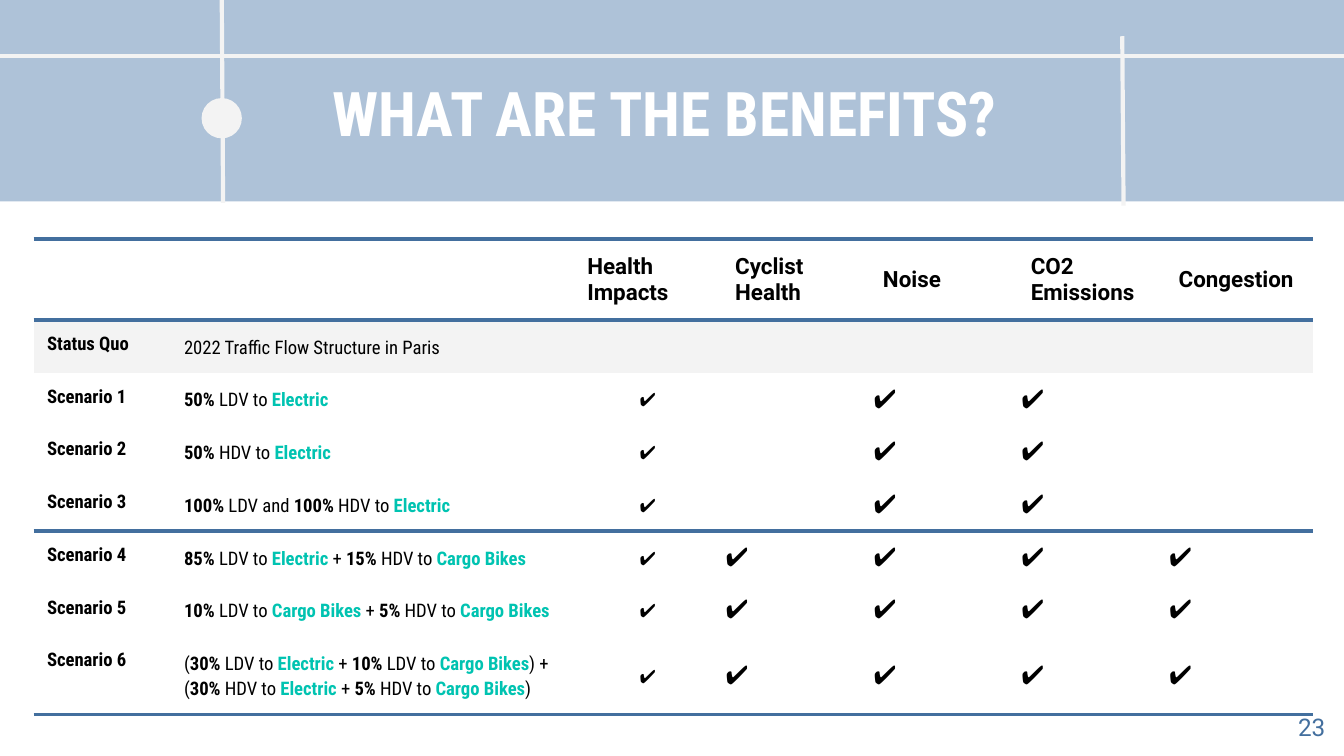
from dataclasses import dataclass

from lxml.etree import SubElement
from pptx import Presentation
from pptx.dml.color import RGBColor
from pptx.enum.shapes import MSO_CONNECTOR, MSO_SHAPE
from pptx.enum.text import MSO_ANCHOR, PP_ALIGN
from pptx.oxml.ns import qn
from pptx.util import Inches, Pt


@dataclass(frozen=True)
class Theme:
    banner: str = "AEC2D8"
    pale: str = "F3F3F3"
    rule: str = "436F9E"
    accent: str = "00C3B1"
    ink: str = "000000"
    white: str = "FFFFFF"
    body_font: str = "Roboto"
    narrow_font: str = "Roboto Condensed"
    mark_font: str = "Arial"
    title_size: float = 33
    number_size: float = 13
    header_size: float = 12
    body_size: float = 10
    mark_size: float = 14
    line_width: float = 2.25


THEME = Theme()
NO_STYLE_NO_GRID = "{2D5ABB26-0587-4C30-8999-92F81FD0307C}"
CHECK = "✔"
SOLUTIONS = ("Electric", "Cargo Bikes")

BENEFITS = ["Health Impacts", "Cyclist Health", "Noise", "CO2 Emissions", "Congestion"]
ELECTRIC_BENEFITS = {"Health Impacts", "Noise", "CO2 Emissions"}
ALL_BENEFITS = set(BENEFITS)

# Name, description with runs parted by "|", benefits
SCENARIOS = [
    ("Status Quo", "2022 Traffic Flow Structure in Paris", set()),
    ("Scenario 1", "50% |LDV to |Electric", ELECTRIC_BENEFITS),
    ("Scenario 2", "50% |HDV to |Electric", ELECTRIC_BENEFITS),
    ("Scenario 3", "100%| LDV and |100%| HDV to |Electric", ELECTRIC_BENEFITS),
    ("Scenario 4", "85%| LDV to |Electric| + |15%| HDV to |Cargo Bikes", ALL_BENEFITS),
    ("Scenario 5", "10%| LDV to |Cargo Bikes| + |5%| HDV to |Cargo Bikes", ALL_BENEFITS),
    ("Scenario 6", "(|30%| LDV to |Electric| + |10% |LDV to |Cargo Bikes|) + (|30%"
                   "| HDV to |Electric| + |5%| HDV to |Cargo Bikes|)", ALL_BENEFITS),
]
COLUMN_WIDTHS = [1.09, 2.93] + [1.1] * len(BENEFITS)
# Least heights: each row grows to fit its text
ROW_HEIGHTS = [0, 0.27, 0, 0.23, 0, 0, 0, 0.27]
TABLE_HEIGHT = 3.44
RULED_BELOW = ("Scenario 3", "Scenario 6")


def color(value):
    return RGBColor.from_string(value)


def style(font, name, size, ink=THEME.ink, bold=None):
    font.name, font.size = name, Pt(size)
    font.color.rgb = color(ink)
    font.bold = bold


def add_plain_shape(slide, kind, fill, *box):
    shape = slide.shapes.add_shape(kind, *map(Inches, box))
    shape.shadow.inherit = False
    shape.fill.solid()
    shape.fill.fore_color.rgb = color(fill)
    shape.line.fill.background()


def add_line(slide, *ends):
    line = slide.shapes.add_connector(MSO_CONNECTOR.STRAIGHT, *map(Inches, ends))
    line.line.color.rgb = color(THEME.pale)
    line.line.width = Pt(THEME.line_width)
    SubElement(line._element.spPr, qn("a:effectLst"))


def add_text(slide, text, box, align, anchor, **font):
    frame = slide.shapes.add_textbox(*map(Inches, box)).text_frame
    frame.word_wrap = True
    frame.vertical_anchor = anchor
    frame.margin_left = frame.margin_right = Inches(0.1)
    frame.margin_top = frame.margin_bottom = Inches(0.1)
    paragraph = frame.paragraphs[0]
    paragraph.text = text
    paragraph.alignment = align
    style(paragraph.font, **font)


def prepare_cell(cell, side, top, anchor=MSO_ANCHOR.MIDDLE):
    """Set margins and anchor, and return the cell's paragraph."""
    cell.margin_left = cell.margin_right = Inches(side)
    cell.margin_top = cell.margin_bottom = Inches(top)
    cell.vertical_anchor = anchor
    return cell.text_frame.paragraphs[0]


def set_border(cell, edge, ruled):
    border = SubElement(cell._tc.get_or_add_tcPr(), qn(f"a:{edge}"),
                        w=str(Pt(THEME.line_width)))
    if ruled:
        SubElement(SubElement(border, qn("a:solidFill")), qn("a:srgbClr"), val=THEME.rule)
    else:
        SubElement(border, qn("a:noFill"))


def finish_row(cells, fill, rule_above, rule_below):
    edges = {"lnL": False, "lnR": False, "lnT": rule_above, "lnB": rule_below}
    for cell in cells:
        for edge, ruled in edges.items():
            set_border(cell, edge, ruled)
        cell.fill.solid()
        cell.fill.fore_color.rgb = color(fill)


def fill_description(cell, description):
    paragraph = prepare_cell(cell, 0.03, 0.1)
    paragraph.line_spacing = 1.15
    for part in description.split("|"):
        run = paragraph.add_run()
        run.text = part
        is_solution = part in SOLUTIONS
        style(run.font, THEME.narrow_font, THEME.body_size,
              THEME.accent if is_solution else THEME.ink,
              is_solution or part.strip().endswith("%"))


def fill_mark(cell, benefit, gained):
    paragraph = prepare_cell(cell, 0.03, 0.02)
    if gained:
        paragraph.text = CHECK
    if benefit == "Health Impacts":
        paragraph.alignment = PP_ALIGN.CENTER
        paragraph.line_spacing = 1.15
        style(paragraph.font, THEME.narrow_font, THEME.body_size, bold=True)
    else:
        style(paragraph.font, THEME.mark_font, THEME.mark_size)


def add_benefit_table(slide):
    frame = slide.shapes.add_table(
        len(ROW_HEIGHTS), len(COLUMN_WIDTHS), Inches(0.25), Inches(1.78),
        Inches(sum(COLUMN_WIDTHS)), Inches(TABLE_HEIGHT))
    table = frame.table
    table.first_row = table.horz_banding = False
    table._tbl.tblPr.find(qn("a:tableStyleId")).text = NO_STYLE_NO_GRID
    for column, width in zip(table.columns, COLUMN_WIDTHS):
        column.width = Inches(width)
    for row, height in zip(table.rows, ROW_HEIGHTS):
        row.height = Inches(height)
    frame.height = Inches(TABLE_HEIGHT)
    header, *scenario_rows = [list(row.cells) for row in table.rows]

    # Header row
    for cell, benefit in zip(header[2:], BENEFITS):
        paragraph = prepare_cell(cell, 0.1, 0.1)
        paragraph.text = benefit
        style(paragraph.font, THEME.body_font, THEME.header_size, bold=True)
    finish_row(header, THEME.white, True, True)

    # Scenario rows
    rule_above = True
    for cells, (name, description, gains) in zip(scenario_rows, SCENARIOS):
        label = prepare_cell(cells[0], 0.1, 0.1, MSO_ANCHOR.TOP)
        label.text = name
        style(label.font, THEME.narrow_font, THEME.body_size, bold=True)
        fill_description(cells[1], description)
        for cell, benefit in zip(cells[2:], BENEFITS):
            fill_mark(cell, benefit, benefit in gains)
        rule_below = name in RULED_BELOW
        finish_row(cells, THEME.white if gains else THEME.pale, rule_above, rule_below)
        rule_above = rule_below


def main():
    deck = Presentation()
    deck.slide_width, deck.slide_height = Inches(10), Inches(10 * 9 / 16)
    slide = deck.slides.add_slide(deck.slide_layouts[6])

    # Banner with street lines
    add_plain_shape(slide, MSO_SHAPE.RECTANGLE, THEME.banner, -0.02, 0, 10.04, 1.5)
    add_line(slide, -0.02, 0.42, 10.02, 0.42)
    add_line(slide, 1.65, 0, 1.66, 1.51)
    add_line(slide, 8.35, 0.27, 8.36, 1.53)
    add_plain_shape(slide, MSO_SHAPE.OVAL, THEME.pale, 1.5, 0.73, 0.3, 0.3)

    # Title and slide number
    add_text(slide, "WHAT ARE THE BENEFITS? ", (0.78, 0.46, 8.44, 0.63),
             PP_ALIGN.CENTER, MSO_ANCHOR.TOP, name=THEME.narrow_font,
             size=THEME.title_size, ink=THEME.white, bold=True)
    add_text(slide, "23", (9.36, 5.19, 0.6, 0.43), PP_ALIGN.RIGHT, MSO_ANCHOR.MIDDLE,
             name=THEME.body_font, size=THEME.number_size, ink=THEME.rule)

    add_benefit_table(slide)
    deck.save("out.pptx")


if __name__ == "__main__":
    main()
